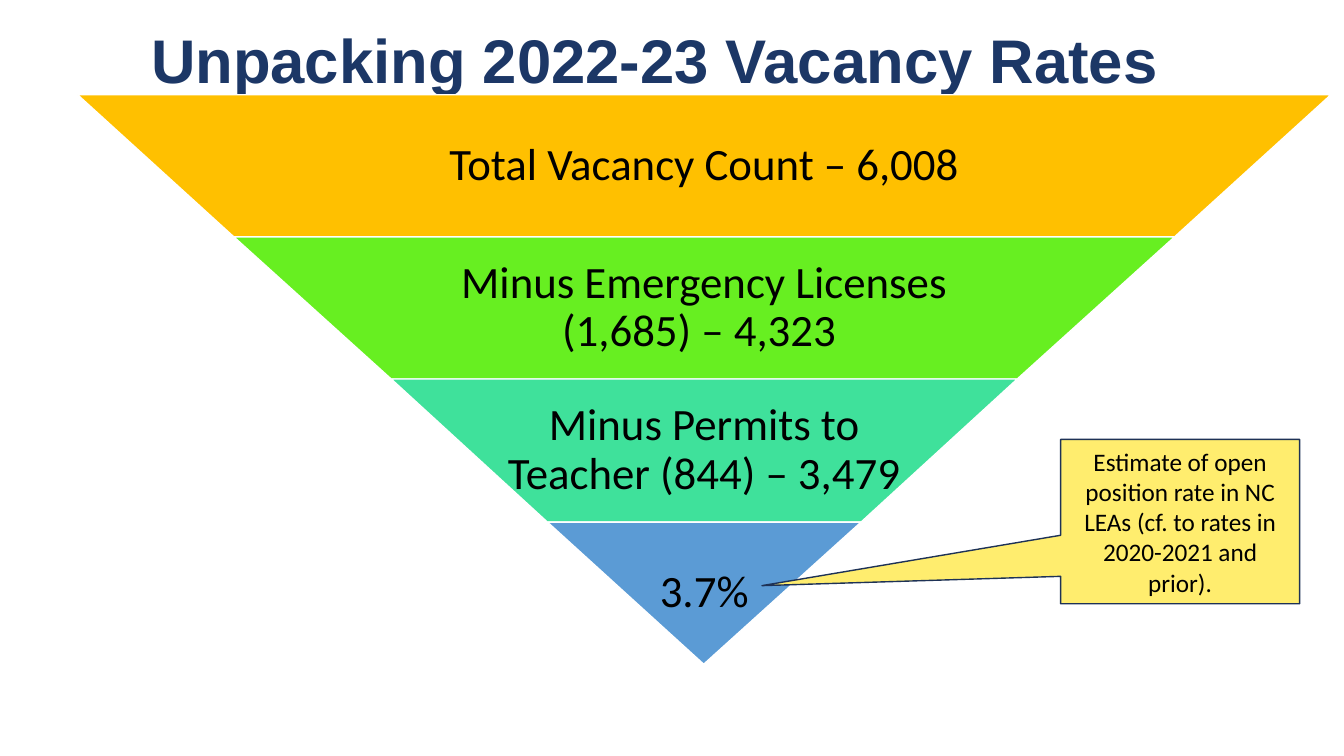
"""Build the 2022-23 vacancy rates funnel slide."""
from pptx import Presentation
from pptx.dml.color import RGBColor
from pptx.enum.shapes import MSO_SHAPE
from pptx.enum.text import MSO_ANCHOR, PP_ALIGN
from pptx.util import Pt

PX = 9144

NAVY = RGBColor(0x1C, 0x37, 0x66)
OUTLINE = RGBColor(0x1E, 0x32, 0x56)
AMBER = RGBColor(0xFF, 0xC0, 0x00)
LIME = RGBColor(0x67, 0xEF, 0x21)
MINT = RGBColor(0x3F, 0xE1, 0x9B)
BLUE = RGBColor(0x5B, 0x9B, 0xD5)
YELLOW = RGBColor(0xFF, 0xED, 0x6E)
WHITE = RGBColor(0xFF, 0xFF, 0xFF)
BLACK = RGBColor(0x00, 0x00, 0x00)


def style_shape(shape, fill, line):
    shape.shadow.inherit = False
    shape.fill.solid()
    shape.fill.fore_color.rgb = fill
    shape.line.color.rgb = line
    shape.line.width = Pt(1)


def write_text(shape, text, color, align, spacing, font_format, margins):
    frame = shape.text_frame
    frame.word_wrap = True
    frame.vertical_anchor = MSO_ANCHOR.MIDDLE
    for side, margin in margins.items():
        setattr(frame, f"margin_{side}", margin * PX)
    paragraph = frame.paragraphs[0]
    paragraph.text = text
    paragraph.alignment = align
    paragraph.line_spacing = spacing
    for name, value in font_format.items():
        setattr(paragraph.font, name, value)
    paragraph.font.color.rgb = color


presentation = Presentation()
presentation.slide_width = 1333 * PX
presentation.slide_height = 750 * PX
slide = presentation.slides.add_slide(presentation.slide_layouts[6])

title = slide.shapes.add_textbox(140 * PX, -9 * PX, 1150 * PX, 145 * PX)
write_text(title, "Unpacking 2022-23 Vacancy Rates", NAVY, PP_ALIGN.LEFT, 0.9,
           {"name": "Arial", "size": Pt(44), "bold": True}, {})

FUNNEL_LEFT, FUNNEL_TOP, FUNNEL_WIDTH, FUNNEL_HEIGHT = 77, 94, 1243, 565
TIERS = [
    ("Total Vacancy Count – 6,008", AMBER, 222),
    ("Minus Emergency Licenses (1,685) – 4,323 ", LIME, 168),
    ("Minus Permits to Teacher (844) – 3,479", MINT, 113),
    ("3.7%", BLUE, 4),
]
tier_height = FUNNEL_HEIGHT / len(TIERS)
tier_slope = FUNNEL_WIDTH / 2 / len(TIERS)

for index, (text, fill, side_margin) in enumerate(TIERS):
    left = FUNNEL_LEFT + index * tier_slope
    right = FUNNEL_LEFT + FUNNEL_WIDTH - index * tier_slope
    top = FUNNEL_TOP + index * tier_height
    bottom = top + tier_height
    builder = slide.shapes.build_freeform(right, top, scale=PX)
    builder.add_line_segments([(right - tier_slope, bottom),
                               (left + tier_slope, bottom), (left, top)])
    tier = builder.convert_to_shape()
    style_shape(tier, fill, WHITE)
    write_text(tier, text, BLACK, PP_ALIGN.CENTER, 0.9,
               {"name": "Calibri", "size": Pt(32)},
               {"left": side_margin, "right": side_margin, "top": 4, "bottom": 4})

callout = slide.shapes.add_shape(MSO_SHAPE.RECTANGULAR_CALLOUT,
                                 1052 * PX, 436 * PX, 237 * PX, 163 * PX)
callout.adjustments[0] = -1.75
callout.adjustments[1] = 0.39
style_shape(callout, YELLOW, OUTLINE)
write_text(callout,
           "Estimate of open position rate in NC LEAs (cf. to rates in 2020-2021 and prior).",
           BLACK, PP_ALIGN.CENTER, 1.0, {"name": "Calibri", "size": Pt(18)}, {})

presentation.save("out.pptx")
